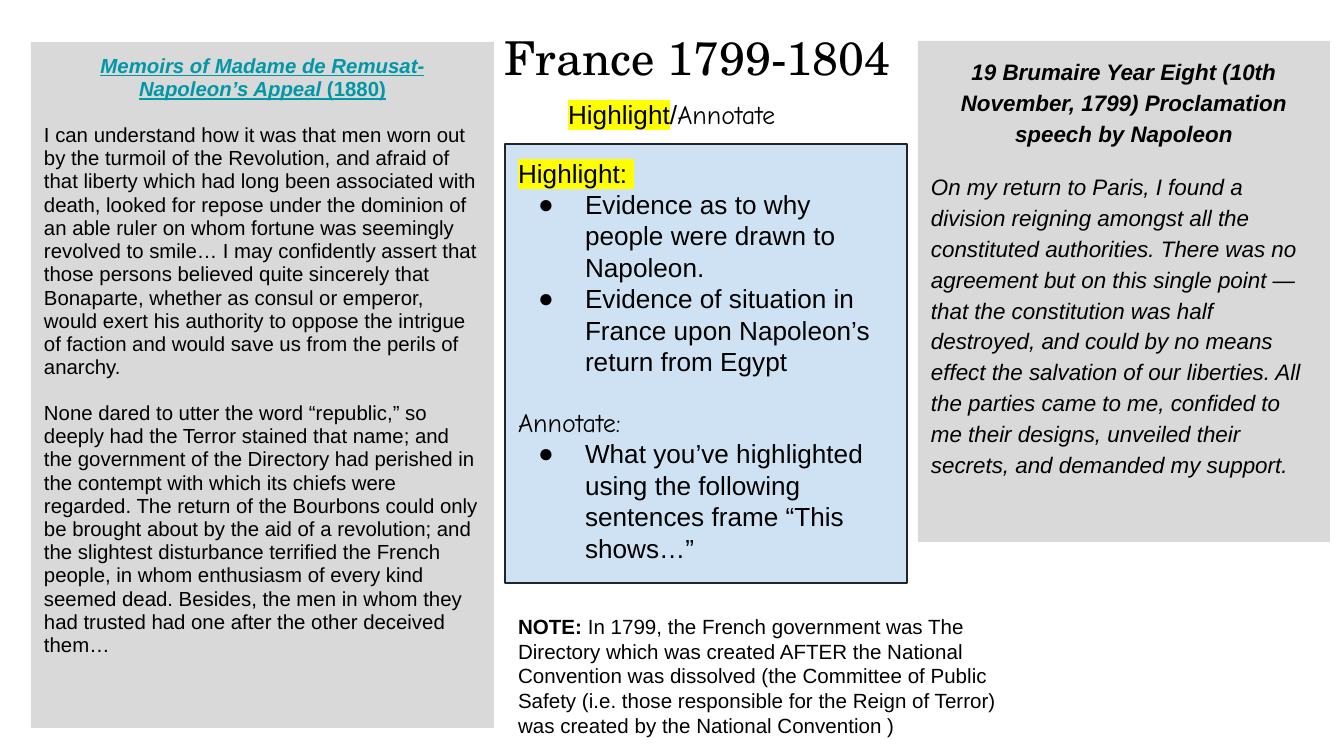
from pptx import Presentation
from pptx.dml.color import RGBColor
from pptx.enum.shapes import MSO_SHAPE
from pptx.enum.text import MSO_ANCHOR, PP_ALIGN
from pptx.oxml.ns import qn
from pptx.util import Pt
from lxml import etree

RECT = MSO_SHAPE.RECTANGLE
TOP = MSO_ANCHOR.TOP
LEFT, MID = PP_ALIGN.LEFT, PP_ALIGN.CENTER

BLACK = RGBColor(0x00, 0x00, 0x00)
GRAY = RGBColor(0xD9, 0xD9, 0xD9)
BLUE = RGBColor(0xCF, 0xE2, 0xF3)
INK = RGBColor(0x21, 0x25, 0x29)
TEAL = RGBColor(0x00, 0x97, 0xA7)
YELLOW = RGBColor(0xFF, 0xFF, 0x00)

SANS, HAND, SERIF = "Arial", "Comic Neue", "TeX Gyre Schola"
SCALE = 914400 / 134.4
INSET = 13


def emu(px):
    return round(px * SCALE)


class Page:
    def __init__(self, wide, high):
        self.deck = Presentation()
        self.deck.slide_width = emu(wide)
        self.deck.slide_height = emu(high)
        self.slide = self.deck.slides.add_slide(self.deck.slide_layouts[6])

    def frame(self, shape):
        frame = shape.text_frame
        frame.word_wrap = True
        frame.vertical_anchor = TOP
        frame.margin_left = frame.margin_right = emu(INSET)
        frame.margin_top = frame.margin_bottom = emu(INSET)
        return frame

    def panel(self, x, y, w, h, fill, line=None):
        shape = self.slide.shapes.add_shape(RECT, emu(x), emu(y), emu(w), emu(h))
        shape.shadow.inherit = False
        shape.fill.solid()
        shape.fill.fore_color.rgb = fill
        if line is None:
            shape.line.fill.background()
        else:
            shape.line.color.rgb = line
            shape.line.width = Pt(0.75)
        return self.frame(shape)

    def label(self, x, y, w, h):
        return self.frame(self.slide.shapes.add_textbox(emu(x), emu(y), emu(w), emu(h)))

    def para(self, frame, align=LEFT, lead=1.0, gap=0):
        para = frame.paragraphs[0]
        if para.runs:
            para = frame.add_paragraph()
            para.space_before = Pt(gap)
        para.alignment = align
        para.line_spacing = lead
        return para

    def run(self, para, text, size, color=BLACK, font=SANS, bold=False,
            italic=False, under=False, mark=None):
        run = para.add_run()
        run.text = text
        style = run.font
        style.size = Pt(size)
        style.bold, style.italic, style.underline = bold, italic, under
        style.color.rgb = color
        if mark is not None:
            glow = etree.SubElement(run._r.get_or_add_rPr(), qn("a:highlight"))
            etree.SubElement(glow, qn("a:srgbClr"), val=str(mark))
        style.name = font

    def bullet(self, frame, text, size):
        para = self.para(frame)
        props = para._p.get_or_add_pPr()
        props.set("marL", str(emu(67)))
        props.set("indent", str(emu(-47)))
        tint = etree.SubElement(props, qn("a:buClr"))
        etree.SubElement(tint, qn("a:srgbClr"), val=str(BLACK))
        etree.SubElement(props, qn("a:buFont"), typeface=SANS)
        etree.SubElement(props, qn("a:buChar"), char="●")
        self.run(para, text, size)


def main():
    page = Page(1344, 756)

    memoir = page.panel(31, 42, 463, 686, GRAY)
    head = page.para(memoir, MID, 0.95)
    page.run(head, "Memoirs of Madame de Remusat- Napoleon’s Appeal", 10.9, TEAL,
             bold=True, italic=True, under=True)
    page.run(head, " (1880)", 10.9, TEAL, bold=True, under=True)
    for text in (
        "I can understand how it was that men worn out by the turmoil of the Revolution, "
        "and afraid of that liberty which had long been associated with death, looked for "
        "repose under the dominion of an able ruler on whom fortune was seemingly revolved "
        "to smile… I may confidently assert that those persons believed quite sincerely "
        "that Bonaparte, whether as consul or emperor, would exert his authority to oppose "
        "the intrigue of faction and would save us from the perils of anarchy.",
        "None dared to utter the word “republic,” so deeply had the Terror stained that "
        "name; and the government of the Directory had perished in the contempt with which "
        "its chiefs were regarded. The return of the Bourbons could only be brought about "
        "by the aid of a revolution; and the slightest disturbance terrified the French "
        "people, in whom enthusiasm of every kind seemed dead. Besides, the men in whom "
        "they had trusted had one after the other deceived them…",
    ):
        page.run(page.para(memoir, lead=0.95, gap=12), text, 10.9)

    task = page.panel(505, 144, 402, 439, BLUE, INK)
    page.run(page.para(task), "Highlight: ", 14, mark=YELLOW)
    page.bullet(task, "Evidence as to why people were drawn to Napoleon.", 14)
    page.bullet(task, "Evidence of situation in France upon Napoleon’s return from Egypt", 14)
    page.run(page.para(task, gap=16), "Annotate:", 14, font=HAND)
    page.bullet(task, "What you’ve highlighted using the following sentences frame "
                "“This shows…”", 14)

    speech = page.panel(918, 41, 412, 501, GRAY)
    page.run(page.para(speech, MID, 1.15),
             "19 Brumaire Year Eight (10th November, 1799) Proclamation speech by Napoleon",
             12, bold=True, italic=True)
    page.run(page.para(speech, lead=1.15, gap=12),
             "On my return to Paris, I found a division reigning amongst all the constituted "
             "authorities. There was no agreement but on this single point — that the "
             "constitution was half destroyed, and could by no means effect the salvation of "
             "our liberties. All the parties came to me, confided to me their designs, "
             "unveiled their secrets, and demanded my support.", 12, italic=True)

    title = page.label(402, 16, 591, 83)
    page.run(page.para(title, MID), "France 1799-1804", 25, font=SERIF)

    key = page.para(page.label(555, 85, 284, 59))
    page.run(key, "Highlight", 14, mark=YELLOW)
    page.run(key, "/", 14)
    page.run(key, "Annotate", 14, font=HAND)

    note = page.para(page.label(505, 601, 526, 152))
    page.run(note, "NOTE:", 11, bold=True)
    page.run(note, " In 1799, the French government was The Directory which was created AFTER "
             "the National Convention was dissolved (the Committee of Public Safety (i.e. "
             "those responsible for the Reign of Terror) was created by the National "
             "Convention )", 11)

    page.deck.save("out.pptx")


if __name__ == "__main__":
    main()
